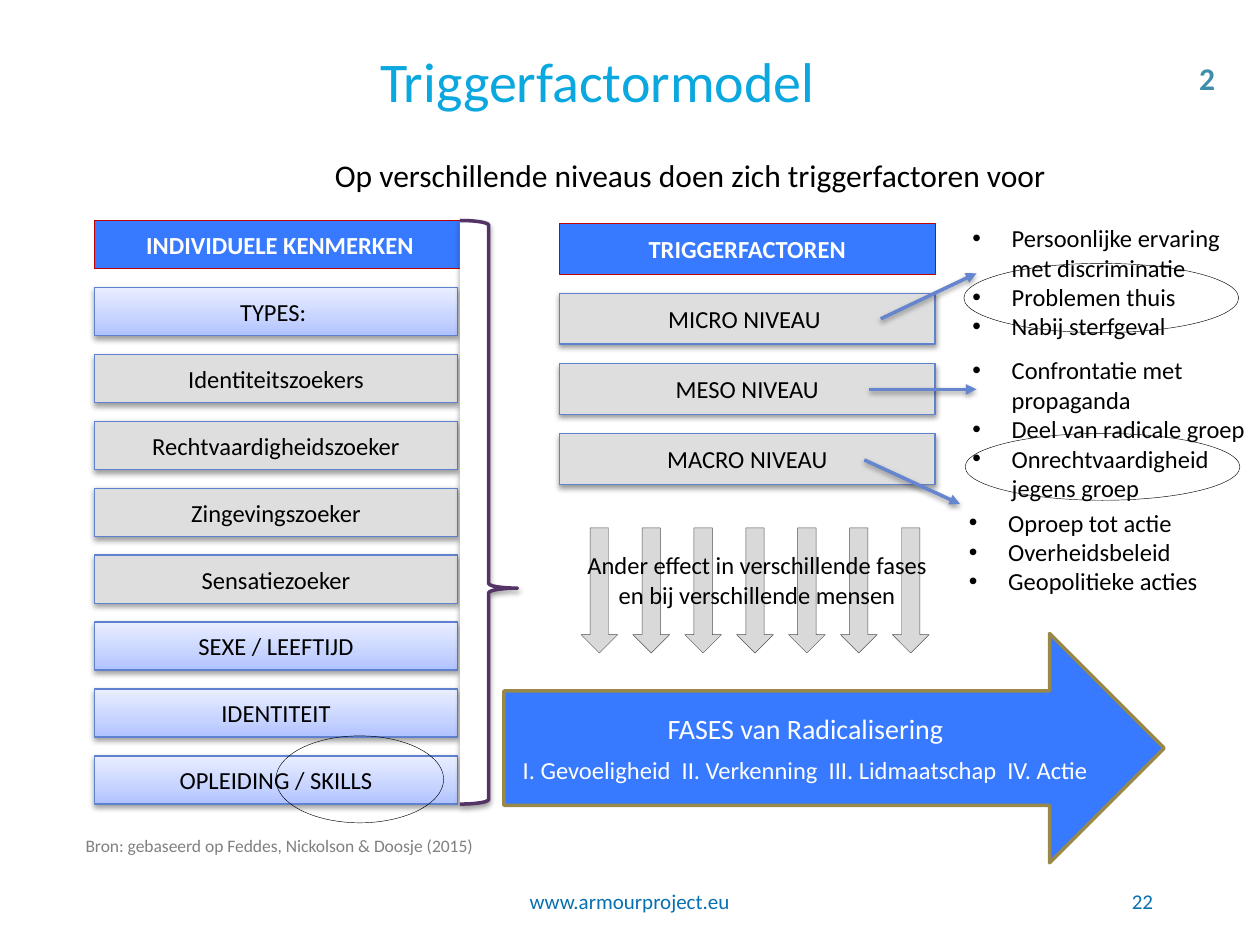
from lxml import etree
from pptx import Presentation
from pptx.dml.color import RGBColor
from pptx.enum.shapes import MSO_CONNECTOR, MSO_SHAPE
from pptx.enum.text import MSO_ANCHOR, PP_ALIGN
from pptx.oxml import parse_xml
from pptx.oxml.ns import nsdecls, qn
from pptx.util import Pt

RECT, OVAL = MSO_SHAPE.RECTANGLE, MSO_SHAPE.OVAL
RIGHT_ARROW, DOWN_ARROW = MSO_SHAPE.RIGHT_ARROW, MSO_SHAPE.DOWN_ARROW
BRACE, STRAIGHT = MSO_SHAPE.RIGHT_BRACE, MSO_CONNECTOR.STRAIGHT
LEFT, CENTER, RIGHT = PP_ALIGN.LEFT, PP_ALIGN.CENTER, PP_ALIGN.RIGHT
TOP, MIDDLE = MSO_ANCHOR.TOP, MSO_ANCHOR.MIDDLE

BLACK = RGBColor(0x00, 0x00, 0x00)
WHITE = RGBColor(0xFF, 0xFF, 0xFF)
GRAY = RGBColor(0x80, 0x80, 0x80)
PALE = RGBColor(0xDE, 0xDE, 0xDE)
SILVER = RGBColor(0xD9, 0xD9, 0xD9)
DARK = RGBColor(0x50, 0x50, 0x50)
BLUE = RGBColor(0x37, 0x7A, 0xFF)
EDGE = RGBColor(0x60, 0x81, 0xCD)
LINK = RGBColor(0x65, 0x85, 0xCF)
CYAN = RGBColor(0x0B, 0xA7, 0xDF)
TEAL = RGBColor(0x3E, 0x8E, 0xA9)
NAVY = RGBColor(0x07, 0x70, 0xB1)
RED = RGBColor(0xC0, 0x00, 0x00)
GOLD = RGBColor(0x98, 0x89, 0x4B)
PLUM = RGBColor(0x54, 0x34, 0x66)
SKY = ((0, RGBColor(0xB0, 0xC2, 0xFF)), (35, RGBColor(0xC6, 0xD3, 0xFF)),
       (100, RGBColor(0xE9, 0xEE, 0xFF)))


class Deck:
    def __init__(self, slide, font="Calibri", size=14):
        self.slide, self.font, self.size = slide, font, size

    def shade(self, item):
        """Give a shape or connector a soft shadow below it."""
        props = item._element.spPr
        effects = props.find(qn("a:effectLst"))
        if effects is None:
            effects = etree.SubElement(props, qn("a:effectLst"))
        effects.append(parse_xml(
            f'<a:outerShdw {nsdecls("a")} blurRad="{Pt(3.1)}" dist="{Pt(1.6)}" '
            'dir="5400000" rotWithShape="0"><a:srgbClr val="000000">'
            '<a:alpha val="38000"/></a:srgbClr></a:outerShdw>'))

    def blend(self, shape, stops):
        """Fill a shape with a gradient that runs from bottom to top."""
        marks = "".join(f'<a:gs pos="{pos * 1000}"><a:srgbClr val="{color}"/></a:gs>'
                        for pos, color in stops)
        shape._element.spPr.insert(2, parse_xml(
            f'<a:gradFill {nsdecls("a")} rotWithShape="1"><a:gsLst>{marks}</a:gsLst>'
            '<a:lin ang="16200000" scaled="0"/></a:gradFill>'))

    def label(self, para, text, color=BLACK, size=None, bold=False, align=LEFT):
        para.alignment = align
        run = para.add_run()
        run.text = text
        font = run.font
        font.name, font.size, font.bold = self.font, Pt(size or self.size), bold
        font.color.rgb = color

    def shape(self, kind, x, y, w, h, fill, line, width, shadow=False):
        shape = self.slide.shapes.add_shape(kind, Pt(x), Pt(y), Pt(w), Pt(h))
        if fill is None:
            shape.fill.background()
        elif fill is SKY:
            self.blend(shape, fill)
        else:
            shape.fill.solid()
            shape.fill.fore_color.rgb = fill
        shape.line.color.rgb = line
        shape.line.width = Pt(width)
        shape.shadow.inherit = False
        if shadow:
            self.shade(shape)
        return shape

    def bar(self, x, y, w, h, text, fill):
        """Add a labelled bar; a blue one is a heading."""
        head = fill is BLUE
        style = (RED, 0.25) if head else (EDGE, 0.75)
        shape = self.shape(RECT, x, y, w, h, fill, *style, shadow=not head)
        shape.text_frame.vertical_anchor = MIDDLE
        self.label(shape.text_frame.paragraphs[0], text,
                   WHITE if head else BLACK, bold=head, align=CENTER)

    def text(self, x, y, w, h, text, anchor=TOP, wrap=True, **style):
        box = self.slide.shapes.add_textbox(Pt(x), Pt(y), Pt(w), Pt(h))
        frame = box.text_frame
        frame.word_wrap, frame.vertical_anchor = wrap, anchor
        self.label(frame.paragraphs[0], text, **style)

    def bullets(self, x, y, w, h, items):
        box = self.slide.shapes.add_textbox(Pt(x), Pt(y), Pt(w), Pt(h))
        frame = box.text_frame
        frame.word_wrap = True
        for i, item in enumerate(items):
            para = frame.add_paragraph() if i else frame.paragraphs[0]
            props = para._p.get_or_add_pPr()
            props.set("marL", str(Pt(22.5)))
            props.set("indent", str(-Pt(22.5)))
            etree.SubElement(props, qn("a:buFont"), typeface="Arial")
            etree.SubElement(props, qn("a:buChar"), char="•")
            self.label(para, item)

    def arrow(self, x1, y1, x2, y2):
        line = self.slide.shapes.add_connector(STRAIGHT, Pt(x1), Pt(y1), Pt(x2), Pt(y2))
        line.line.color.rgb = LINK
        line.line.width = Pt(2)
        props = line._element.spPr
        etree.SubElement(props.find(qn("a:ln")), qn("a:tailEnd"), type="triangle")
        self.shade(line)


TRAITS = (("TYPES: ", SKY), ("Identiteitszoekers", PALE),
          ("Rechtvaardigheidszoeker", PALE), ("Zingevingszoeker", PALE),
          ("Sensatiezoeker", PALE), ("SEXE / LEEFTIJD", SKY),
          ("IDENTITEIT", SKY), ("OPLEIDING / SKILLS", SKY))
LEVELS = (("TRIGGERFACTOREN", BLUE), ("MICRO NIVEAU ", PALE),
          ("MESO NIVEAU", PALE), ("MACRO NIVEAU", PALE))
EVENTS = (
    (548.5, 124, 75, ("Persoonlijke ervaring met discriminatie",
                      "Problemen thuis", "Nabij sterfgeval")),
    (548.5, 199.5, 92, ("Confrontatie met propaganda", "Deel van radicale groep",
                        "Onrechtvaardigheid jegens groep")),
    (546.5, 286.5, 58, ("Oproep tot actie", "Overheidsbeleid", "Geopolitieke acties")),
)
LINKS = ((503.3, 182.2, 558, 156.2), (496.8, 222.5, 558, 222.5),
         (493.9, 262.8, 548.6, 288))
RINGS = ((157.7, 420.5, 95.8, 49.7), (550.8, 150.5, 157, 39.6),
         (551.5, 247.7, 157, 38.2))


def main():
    prs = Presentation()
    prs.slide_width, prs.slide_height = Pt(720), Pt(540)
    deck = Deck(prs.slides.add_slide(prs.slide_layouts[6]))

    deck.text(93, 23, 497, 54, "Triggerfactormodel", size=32, color=CYAN, align=CENTER)
    deck.text(184.3, 85.7, 435, 29,
              "Op verschillende niveaus doen zich triggerfactoren voor", size=18)
    deck.text(678.2, 30.2, 24, 29, "2", wrap=False, size=18, color=TEAL, bold=True)
    deck.text(275.8, 500.4, 168, 28.8, "www.armourproject.eu", MIDDLE,
              size=12, color=NAVY, align=CENTER)
    deck.text(516, 500.4, 150, 28.8, "22", MIDDLE, size=12, color=NAVY, align=RIGHT)
    deck.text(41.8, 473.8, 246, 19.4,
              "Bron: gebaseerd op Feddes, Nickolson & Doosje (2015)", size=10, color=GRAY)

    deck.bar(54, 126, 212, 27.5, "INDIVIDUELE KENMERKEN", BLUE)
    for i, (name, fill) in enumerate(TRAITS, 1):
        deck.bar(54, 126 + 38.25 * i, 207.5, 27.5, name, fill)
    brace = deck.shape(BRACE, 262.8, 126, 33, 333.5, WHITE, PLUM, 2, shadow=True)
    brace.adjustments[0], brace.adjustments[1] = 0.08, 0.63

    for i, (name, fill) in enumerate(LEVELS):
        deck.bar(319.7, 127.5 + 40.1 * i, 214.6, 29, name, fill)
    for i in range(7):
        deck.shape(DOWN_ARROW, 332 + 29.65 * i, 301.7, 21, 71.5, SILVER, DARK, 0.25)
    deck.text(324, 311, 217.4, 41,
              "Ander effect in verschillende fases en bij verschillende mensen", align=CENTER)

    frame = deck.shape(RIGHT_ARROW, 288, 362, 377.3, 131, BLUE, GOLD, 2).text_frame
    frame.vertical_anchor = MIDDLE
    title = frame.paragraphs[0]
    title.space_after = Pt(6)
    deck.label(title, "FASES van Radicalisering", WHITE, 16, align=CENTER)
    deck.label(frame.add_paragraph(),
               "I. Gevoeligheid  II. Verkenning  III. Lidmaatschap  IV. Actie",
               WHITE, align=CENTER)

    for ends in LINKS:
        deck.arrow(*ends)
    for x, y, h, items in EVENTS:
        deck.bullets(x, y, 179.3, h, items)
    for ring in RINGS:
        deck.shape(OVAL, *ring, None, BLACK, 0.25)

    prs.save("out.pptx")


if __name__ == "__main__":
    main()
